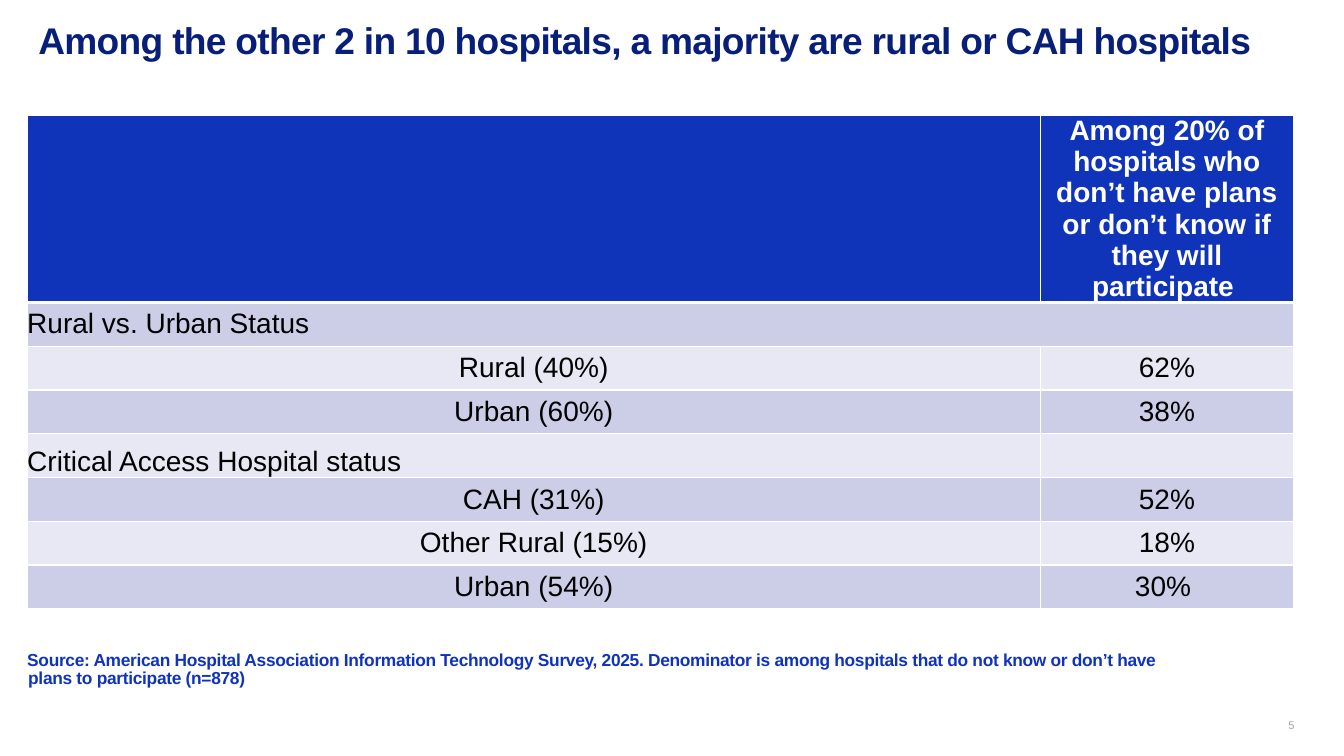
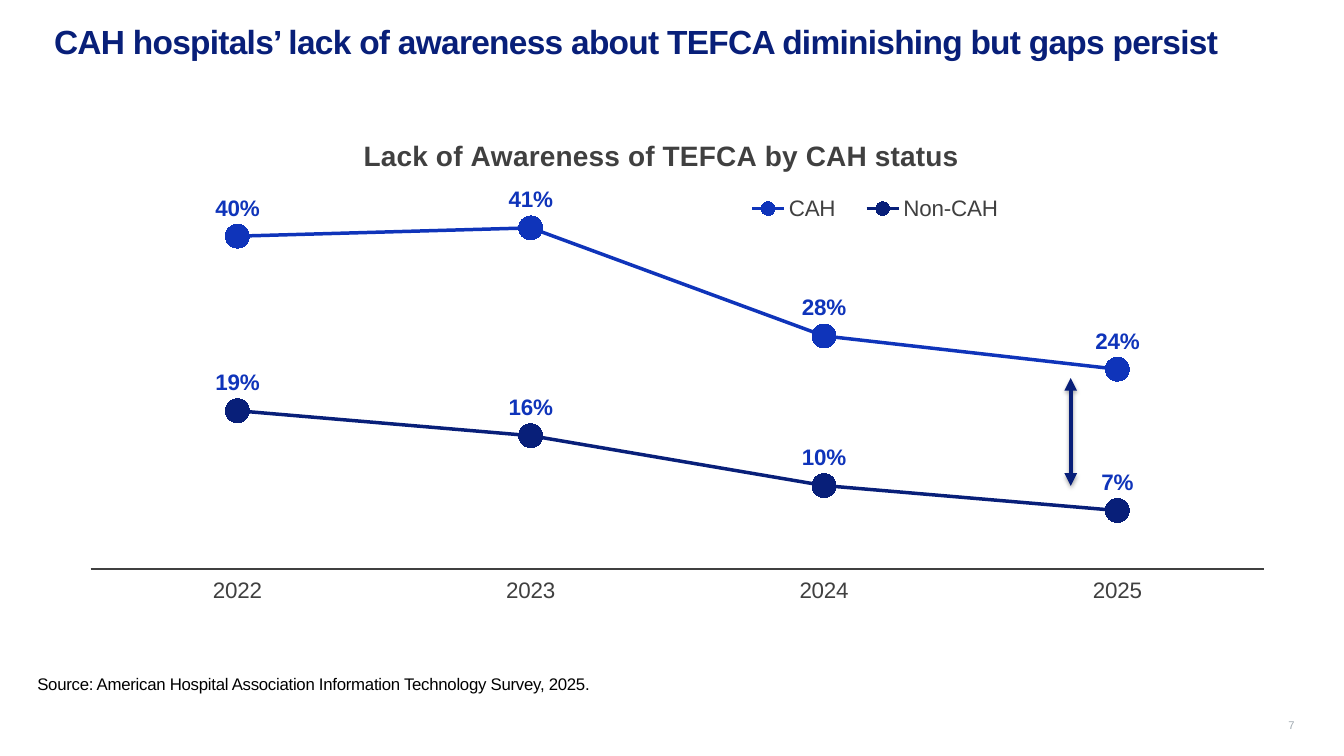
from dataclasses import dataclass

from lxml import etree
from pptx import Presentation
from pptx.chart.data import CategoryChartData
from pptx.dml.color import RGBColor
from pptx.enum.chart import (XL_CHART_TYPE, XL_LABEL_POSITION, XL_LEGEND_POSITION,
                             XL_MARKER_STYLE, XL_TICK_LABEL_POSITION, XL_TICK_MARK)
from pptx.enum.shapes import MSO_CONNECTOR
from pptx.enum.text import MSO_ANCHOR, MSO_AUTO_SIZE, PP_ALIGN
from pptx.oxml import parse_xml
from pptx.oxml.ns import nsdecls, qn
from pptx.util import Inches, Pt

LEFT, CENTER, RIGHT = PP_ALIGN.LEFT, PP_ALIGN.CENTER, PP_ALIGN.RIGHT
TOP, MIDDLE, BOTTOM = MSO_ANCHOR.TOP, MSO_ANCHOR.MIDDLE, MSO_ANCHOR.BOTTOM
STRAIGHT = MSO_CONNECTOR.STRAIGHT
LINES = XL_CHART_TYPE.LINE_MARKERS
CIRCLE = XL_MARKER_STYLE.CIRCLE
ABOVE = XL_LABEL_POSITION.ABOVE
BELOW = XL_LEGEND_POSITION.BOTTOM
NO_TICK = XL_TICK_MARK.NONE
LOW = XL_TICK_LABEL_POSITION.LOW


@dataclass(frozen=True)
class Theme:
    face: str = "Arial"
    navy: str = "081F79"
    blue: str = "0F34BA"
    white: str = "FFFFFF"
    black: str = "000000"
    gray: str = "404040"
    pale: str = "A1AAB1"
    bands: tuple = ("CCCEE7", "E7E8F3")
    page: float = 8
    note: float = 12
    label: float = 16
    body: float = 20


THEME = Theme()


def assign(target, **values):
    for name, value in values.items():
        setattr(target, name, value)


def style(font, size, color, bold=False):
    assign(font, name=THEME.face, size=Pt(size), bold=bold)
    font.color.rgb = RGBColor.from_string(color)


def paint(target, color):
    target.fill.solid()
    target.fill.fore_color.rgb = RGBColor.from_string(color)


def stroke(line, color, width):
    line.color.rgb = RGBColor.from_string(color)
    line.width = Pt(width)


def write(shape, text, size, color, bold=False, align=LEFT, anchor=TOP,
          inset=(0, 0.05), track=0, **spacing):
    frame = shape.text_frame
    assign(frame, word_wrap=True, auto_size=MSO_AUTO_SIZE.NONE, vertical_anchor=anchor,
           margin_left=0, margin_right=0,
           margin_top=Inches(inset[0]), margin_bottom=Inches(inset[1]))
    para = frame.paragraphs[0]
    assign(para, alignment=align, **spacing)
    run = para.add_run()
    run.text = text
    style(run.font, size, color, bold)
    if track:
        run.font._element.set("spc", str(round(track * 100)))
    return para


def add_box(slide, box):
    return slide.shapes.add_textbox(*map(Inches, box))


def add_frame(deck, title, box, size, page, align=LEFT):
    slide = deck.slides.add_slide(deck.slide_layouts[5])
    left, top, width, height = map(Inches, box)
    assign(slide.shapes.title, left=left, top=top, width=width, height=height)
    write(slide.shapes.title, title, size, THEME.navy, True, align, track=-0.5)
    write(add_box(slide, (12.54, 6.89, 0.3, 0.37)), page, THEME.page, THEME.pale,
          align=RIGHT, anchor=BOTTOM, inset=(0, 0), line_spacing=0.9)
    return slide


def add_source(slide, text, box, size, color, bold, leading):
    para = write(add_box(slide, box), text, size, color, bold, inset=(0.1, 0.05),
                 track=-0.2, line_spacing=leading, space_after=Pt(6))
    props = para._p.get_or_add_pPr()
    props.set("marL", str(Inches(0.01)))
    props.set("indent", str(Inches(-0.01)))


def edge(cell, base):
    props = cell._tc.get_or_add_tcPr()
    for side, width in (("L", 1), ("R", 1), ("T", 1), ("B", base)):
        props.append(parse_xml(
            f'<a:ln{side} {nsdecls("a")} w="{Pt(width)}"><a:solidFill>'
            f'<a:srgbClr val="{THEME.white}"/></a:solidFill></a:ln{side}>'))


def fill_cell(cell, text, color, ink, bold, align, anchor, base):
    edge(cell, base)
    paint(cell, color)
    assign(cell, margin_left=0, margin_right=0, margin_top=0, margin_bottom=0,
           vertical_anchor=anchor)
    para = cell.text_frame.paragraphs[0]
    para.alignment = align
    style(para.font, THEME.body, ink, bold)
    if text:
        run = para.add_run()
        run.text = text
        style(run.font, THEME.body, ink, bold)


def add_grid(slide, box, rows):
    left, top, width, height = box
    table = slide.shapes.add_table(len(rows), 2, *map(Inches, box)).table
    table.horz_banding = False
    for col, share in zip(table.columns, (0.8, 0.2)):
        col.width = Inches(width * share)
    head = 1.85
    step = (height - head) / (len(rows) - 1)
    for num, (row, texts) in enumerate(zip(table.rows, rows)):
        row.height = Inches(step if num else head)
        group = num and not texts[1]
        for col, text in enumerate(texts):
            fill_cell(table.cell(num, col), text,
                      THEME.bands[(num - 1) % 2] if num else THEME.blue,
                      THEME.black if num else THEME.white, not num,
                      LEFT if group else CENTER,
                      BOTTOM if group and num > 1 else MIDDLE, 1 if num else 3)
    table.cell(1, 0).merge(table.cell(1, 1))


def lay_out(part, index, inner=False, **spots):
    for old in part.findall(qn("c:layout")):
        part.remove(old)
    modes = "".join(f'<c:{key}Mode val="edge"/>' for key in "xy")
    sizes = "".join(f'<c:{key} val="{value}"/>' for key, value in spots.items())
    target = '<c:layoutTarget val="inner"/>' if inner else ""
    part.insert(index, parse_xml(
        f'<c:layout {nsdecls("c")}><c:manualLayout>{target}{modes}{sizes}'
        '</c:manualLayout></c:layout>'))


def add_trend(slide, box, title, years, trends):
    data = CategoryChartData(number_format="0%")
    data.categories = years
    for name, values, _ in trends:
        data.add_series(name, values)
    chart = slide.shapes.add_chart(LINES, *map(Inches, box), data).chart
    style(chart.font, THEME.label, THEME.gray)
    chart.has_title = True
    run = chart.chart_title.text_frame.paragraphs[0].add_run()
    run.text = title
    style(run.font, THEME.body, THEME.gray, True)
    chart.has_legend = True
    assign(chart.legend, position=BELOW, include_in_layout=False)
    style(chart.legend.font, THEME.label, THEME.gray)

    assign(chart.value_axis, visible=False, has_major_gridlines=False,
           minimum_scale=0, maximum_scale=0.45)
    axis = chart.category_axis
    assign(axis, major_tick_mark=NO_TICK, minor_tick_mark=NO_TICK,
           tick_label_position=LOW, has_major_gridlines=False)
    style(axis.tick_labels.font, THEME.label, THEME.gray)
    stroke(axis.format.line, THEME.gray, 1.5)

    plot = chart.plots[0]
    plot.vary_by_categories = False
    for trend, (_, _, color) in zip(plot.series, trends):
        trend.smooth = False
        stroke(trend.format.line, color, 2.5)
        assign(trend.marker, style=CIRCLE, size=17)
        paint(trend.marker.format, color)
        stroke(trend.marker.format.line, color, 0.75)
        labels = trend.data_labels
        assign(labels, show_value=True, position=ABOVE, number_format="0%",
               number_format_is_linked=False)
        style(labels.font, THEME.label, THEME.blue, True)

    root = chart.element.find(qn("c:chart"))
    lay_out(root.find(qn("c:title")), 1, x=0.27, y=0.04)
    lay_out(root.find(qn("c:legend")), 1, x=0.56, y=0.14, w=0.23, h=0.07)
    lay_out(root.find(qn("c:plotArea")), 0, True, x=0.06, y=0.15, w=0.92, h=0.67)


def add_gap(slide, x, top, end):
    arrow = slide.shapes.add_connector(STRAIGHT, *map(Inches, (x, top, x, end)))
    stroke(arrow.line, THEME.navy, 3)
    props = arrow._element.spPr
    line = props.find(qn("a:ln"))
    for name in ("a:headEnd", "a:tailEnd"):
        etree.SubElement(line, qn(name)).set("type", "triangle")
    props.append(parse_xml(
        f'<a:effectLst {nsdecls("a")}><a:outerShdw blurRad="{Pt(3.1)}" dist="{Pt(1.8)}" '
        f'dir="5400000" rotWithShape="0"><a:srgbClr val="{THEME.black}">'
        '<a:alpha val="35000"/></a:srgbClr></a:outerShdw></a:effectLst>'))


def rural_slide(deck):
    slide = add_frame(
        deck, "Among the other 2 in 10 hospitals, a majority are rural or CAH hospitals",
        (0.38, 0.17, 12.34, 0.64), 26.5, "5")
    add_source(slide, "Source: American Hospital Association Information Technology Survey, "
               "2025. Denominator is among hospitals that do not know or don’t have plans "
               "to participate (n=878)",
               (0.27, 6.36, 11.68, 0.54), 12.4, THEME.blue, True, 0.9)
    add_grid(slide, (0.27, 1.14, 12.56, 4.89), (
        ("", "Among 20% of hospitals who don’t have plans or don’t know if they will "
             "participate "),
        ("Rural vs. Urban Status", ""),
        ("Rural (40%)", "62%"),
        ("Urban (60%)", "38%"),
        ("Critical Access Hospital status", ""),
        ("CAH (31%)", "52%"),
        ("Other Rural (15%)", "18%"),
        ("Urban (54%)", "30% "),
    ))


def aware_slide(deck):
    slide = add_frame(
        deck, "CAH hospitals’ lack of awareness about TEFCA diminishing but gaps persist",
        (0.14, 0.21, 12.34, 0.7), 23.9, "7", CENTER)
    add_trend(slide, (0.14, 1.1, 12.65, 5.54), "Lack of Awareness of TEFCA by CAH status",
              ("2022", "2023", "2024", "2025"),
              (("CAH", (0.4, 0.41, 0.28, 0.24), THEME.blue),
               ("Non-CAH", (0.19, 0.16, 0.1, 0.07), THEME.navy)))
    add_source(slide, "Source: American Hospital Association Information Technology Survey, "
               "2025.", (0.37, 6.56, 9.69, 0.54), THEME.note, THEME.black, False, 1.1)
    add_gap(slide, 10.62, 3.75, 4.82)


def main():
    deck = Presentation()
    assign(deck, slide_width=Inches(13.33), slide_height=Inches(7.5))
    rural_slide(deck)
    aware_slide(deck)
    deck.save("out.pptx")


if __name__ == "__main__":
    main()
